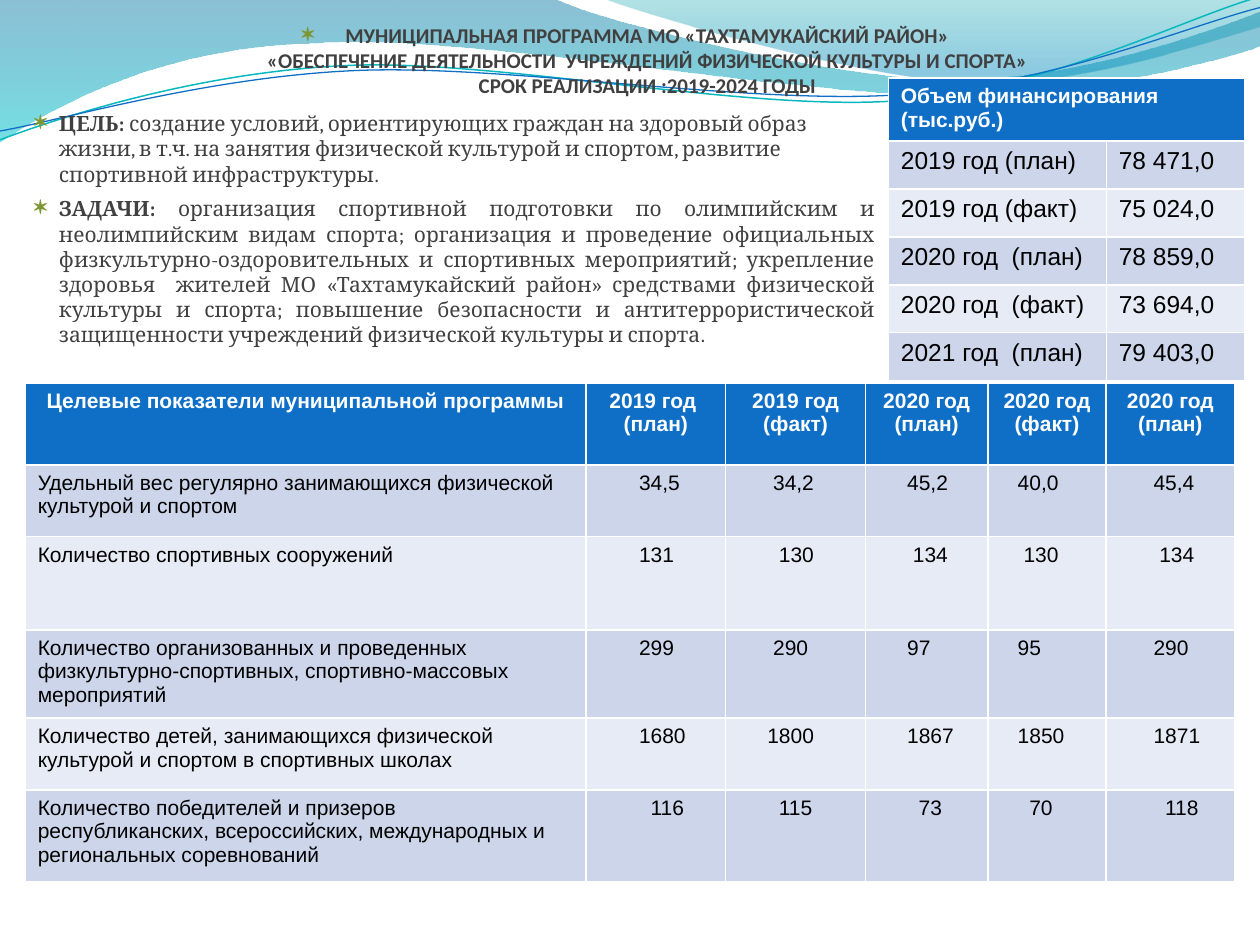
from pptx import Presentation
from pptx.dml.color import RGBColor
from pptx.enum.text import PP_ALIGN as Align
from pptx.oxml import parse_xml
from pptx.oxml.ns import nsdecls, qn
from pptx.util import Inches, Pt

WHITE = RGBColor(0xFF, 0xFF, 0xFF)
BLACK = RGBColor(0, 0, 0)
GREY = RGBColor(0x40, 0x40, 0x40)
BLUE = RGBColor(0x0F, 0x6F, 0xC6)
TEAL = RGBColor(0x0A, 0xB8, 0xBF)
DARK_BAND = RGBColor(0xCC, 0xD5, 0xEA)
LIGHT_BAND = RGBColor(0xE7, 0xEB, 0xF5)
BULLET = RGBColor(0x7E, 0x96, 0x32)
DEEP_BLUE = RGBColor(0, 0x74, 0xA1)
AQUA = RGBColor(0, 0xC6, 0xCF)
SEA = RGBColor(0, 0xA1, 0xA9)
SKY = RGBColor(0, 0x8B, 0xBF)

SPACE = 0.046

TITLE_LINES = [
    "МУНИЦИПАЛЬНАЯ ПРОГРАММА МО «ТАХТАМУКАЙСКИЙ РАЙОН»",
    "«ОБЕСПЕЧЕНИЕ ДЕЯТЕЛЬНОСТИ  УЧРЕЖДЕНИЙ ФИЗИЧЕСКОЙ КУЛЬТУРЫ И СПОРТА»",
    "СРОК РЕАЛИЗАЦИИ :2019-2024 ГОДЫ",
]
GOALS = [
    ("ЦЕЛЬ: ", "создание условий, ориентирующих граждан на здоровый образ жизни, в т.ч. на занятия "
     "физической культурой и спортом, развитие спортивной инфраструктуры.", Align.LEFT),
    ("ЗАДАЧИ: ", "организация спортивной подготовки по олимпийским и неолимпийским видам спорта; "
     "организация и проведение официальных физкультурно-оздоровительных и спортивных мероприятий; "
     "укрепление здоровья  жителей МО «Тахтамукайский район» средствами физической культуры и спорта; "
     "повышение безопасности и антитеррористической защищенности учреждений физической культуры и спорта.",
     Align.JUSTIFY),
]
FUNDING = [
    ("2019 год (план)", "78 471,0"),
    ("2019 год (факт)", "75 024,0"),
    ("2020 год  (план)", "78 859,0"),
    ("2020 год  (факт)", "73 694,0"),
    ("2021 год  (план)", "79 403,0"),
]
INDICATOR_HEADS = [
    ["Целевые показатели муниципальной программы"],
    ["2019 год ", "(план)"],
    ["2019 год (факт)"],
    ["2020 год", "(план)"],
    ["2020 год", "(факт)"],
    ["2020 год", "(план)"],
]
INDICATORS = [
    ("Удельный вес регулярно занимающихся физической культурой и спортом",
     ["34,5", "34,2", "45,2", "40,0", "45,4"], [7, 6, 5, 3, 6]),
    ("Количество спортивных сооружений",
     ["131", "130", "134", "130", "134"], [7, 7, 6, 4, 7]),
    ("Количество организованных и проведенных физкультурно-спортивных, спортивно-массовых мероприятий",
     ["299", "290", "97", "95", "290"], [7, 6, 5, 3, 6]),
    ("Количество детей, занимающихся физической культурой и спортом в спортивных школах",
     ["1680", "1800", "1867", "1850", "1871"], [7, 5, 5, 3, 6]),
    ("Количество победителей и призеров республиканских, всероссийских, международных и "
     "региональных соревнований",
     ["116", "115", "73", "70", "118"], [9, 7, 7, 5, 8]),
]


def add_run(paragraph, text, font, size, color, bold=False):
    run = paragraph.add_run()
    run.text = text
    run.font.name = font
    run.font.size = Pt(size)
    run.font.bold = bold
    run.font.color.rgb = color


def set_bullet(paragraph, margin, hanging, percent):
    properties = paragraph._p.get_or_add_pPr()
    properties.set("marL", str(Inches(margin)))
    properties.set("indent", str(-Inches(hanging)))
    for xml in (f'<a:buClr {nsdecls("a")}><a:srgbClr val="{BULLET}"/></a:buClr>',
                f'<a:buSzPct {nsdecls("a")} val="{percent * 1000}"/>',
                f'<a:buFont {nsdecls("a")} typeface="Symbol" pitchFamily="18" charset="2"/>',
                f'<a:buChar {nsdecls("a")} char="*"/>'):
        properties.append(parse_xml(xml))


def add_wave(slide, segments, close):
    points = [(Inches(x), Inches(y)) for part in segments for x, y in zip(part[::2], part[1::2])]
    builder = slide.shapes.build_freeform(*points[0], scale=1.0)
    builder.add_line_segments(points[1:], close=close)
    shape = builder.convert_to_shape()
    shape.shadow.inherit = False
    lines = iter(list(shape._element.iter(qn("a:lnTo"))))
    for segment in segments[1:]:
        line = next(lines)
        if len(segment) == 6:
            curve = parse_xml(f'<a:cubicBezTo {nsdecls("a")}/>')
            line.addprevious(curve)
            for control in (line, next(lines), next(lines)):
                curve.append(control[0])
                control.getparent().remove(control)
    return shape


def add_wave_fill(slide, segments, stops):
    shape = add_wave(slide, segments, True)
    shape.fill.gradient()
    shape.fill.gradient_angle = 270
    for stop, (position, color, _) in zip(shape.fill.gradient_stops, stops):
        stop.position = position
        stop.color.rgb = color
    for element, (_, _, opacity) in zip(shape._element.spPr.iter(qn("a:srgbClr")), stops):
        element.append(parse_xml(f'<a:alpha {nsdecls("a")} val="{opacity * 1000}"/>'))
    shape.line.fill.background()


def add_wave_line(slide, segments, color, width):
    shape = add_wave(slide, segments, False)
    shape.fill.background()
    shape.line.color.rgb = color
    shape.line.width = Pt(width)


def add_waves(slide):
    add_wave_fill(slide, [
        (0, 0), (4.4, -0.01), (4.76, 0.17, 6.64, 0.63, 7.58, 0.63), (8.53, 0.63, 9.58, 0.26, 10, 0.09),
        (10.01, 0.36), (9.83, 0.44, 8.7, 0.76, 7.46, 0.75), (6.22, 0.75, 3.82, 0.28, 2.57, 0.34),
        (1.29, 0.36, 0.46, 0.83, -0.01, 1.13),
    ], [(0, DEEP_BLUE, 45), (1, AQUA, 55)])
    add_wave_fill(slide, [
        (4.79, -0.01), (5.09, 0.11, 6.82, 0.62, 7.69, 0.65), (8.56, 0.69, 9.61, 0.32, 10, 0.21), (10, 0),
    ], [(0, SEA, 30), (0.8, SKY, 45)])
    add_wave_line(slide, [
        (0, 1.11), (0.48, 0.93, 1.58, 0.57, 2.77, 0.52), (3.95, 0.47, 5.93, 0.89, 7.13, 0.8),
        (8.33, 0.71, 9.38, 0.15, 9.98, -0.02),
    ], TEAL, 0.85)
    add_wave_line(slide, [
        (0, 1.04), (0.47, 0.96, 1.64, 0.61, 2.83, 0.56), (4.03, 0.51, 5.97, 0.84, 7.17, 0.75),
        (8.36, 0.67, 9.41, 0.21, 10, 0.06),
    ], BLUE, 0.75)


def add_text_frame(slide, box):
    frame = slide.shapes.add_textbox(*map(Inches, box)).text_frame
    frame.word_wrap = True
    return frame


def add_title(slide, box):
    paragraph = add_text_frame(slide, box).paragraphs[0]
    paragraph.alignment = Align.CENTER
    set_bullet(paragraph, 0.35, 0.35, 128)
    for index, line in enumerate(TITLE_LINES):
        if index:
            paragraph.add_line_break()
        add_run(paragraph, line, "Calibri", 12, GREY, True)


def add_goals(slide, box):
    frame = add_text_frame(slide, box)
    for index, (label, text, alignment) in enumerate(GOALS):
        paragraph = frame.add_paragraph() if index else frame.paragraphs[0]
        paragraph.alignment = alignment
        paragraph.space_before = Pt(2.4)
        paragraph.space_after = Pt(3)
        set_bullet(paragraph, 0.25, 0.2, 130)
        add_run(paragraph, label, "Cambria", 12, GREY, True)
        add_run(paragraph, text, "Cambria", 12, GREY)


def add_grid(slide, box, widths, heights):
    table = slide.shapes.add_table(len(heights), len(widths), *map(Inches, box)).table
    for column, width in zip(table.columns, widths):
        column.width = Inches(width)
    for row, height in zip(table.rows, heights):
        row.height = Inches(height)
    for row_index, row in enumerate(table.rows):
        band = DARK_BAND if row_index % 2 else LIGHT_BAND
        for cell in row.cells:
            cell.fill.solid()
            cell.fill.fore_color.rgb = band if row_index else BLUE
    return table


def fill_cell(cell, lines, size=12, color=BLACK, bold=False, alignment=Align.LEFT):
    for index, line in enumerate(lines):
        paragraph = cell.text_frame.add_paragraph() if index else cell.text_frame.paragraphs[0]
        paragraph.alignment = alignment
        add_run(paragraph, line, "Arial", size, color, bold)


def add_funding_table(slide, box):
    table = add_grid(slide, box, [1.73, 1.1], [0.38] * 6)
    table.cell(0, 0).merge(table.cell(0, 1))
    fill_cell(table.cell(0, 0), ["Объем финансирования (тыс.руб.)"], 12, WHITE, True)
    for row, values in enumerate(FUNDING, 1):
        for column, value in enumerate(values):
            fill_cell(table.cell(row, column), [value], 14)


def add_indicator_table(slide, box):
    table = add_grid(slide, box, [4.45, 1.11, 1.11, 0.97, 0.94, 1.02], [0.65, 0.57, 0.74, 0.57, 0.57, 0.73])
    for column, lines in enumerate(INDICATOR_HEADS):
        fill_cell(table.cell(0, column), lines, 12, WHITE, True, Align.CENTER)
    for row, (name, values, indents) in enumerate(INDICATORS, 1):
        fill_cell(table.cell(row, 0), [name])
        for column, (value, indent) in enumerate(zip(values, indents), 1):
            cell = table.cell(row, column)
            cell.margin_left = Inches(0.1 + indent * SPACE)
            fill_cell(cell, [value])


def main():
    presentation = Presentation()
    presentation.slide_width = Inches(10)
    presentation.slide_height = Inches(7.5)
    slide = presentation.slides.add_slide(presentation.slide_layouts[6])
    add_waves(slide)
    add_title(slide, (0.28, 0.13, 9.37, 0.94))
    add_funding_table(slide, (7.05, 0.62, 2.83, 2.4))
    add_goals(slide, (0.12, 0.83, 6.93, 2.52))
    add_indicator_table(slide, (0.2, 3.04, 9.61, 3.96))
    presentation.save("out.pptx")


if __name__ == "__main__":
    main()
